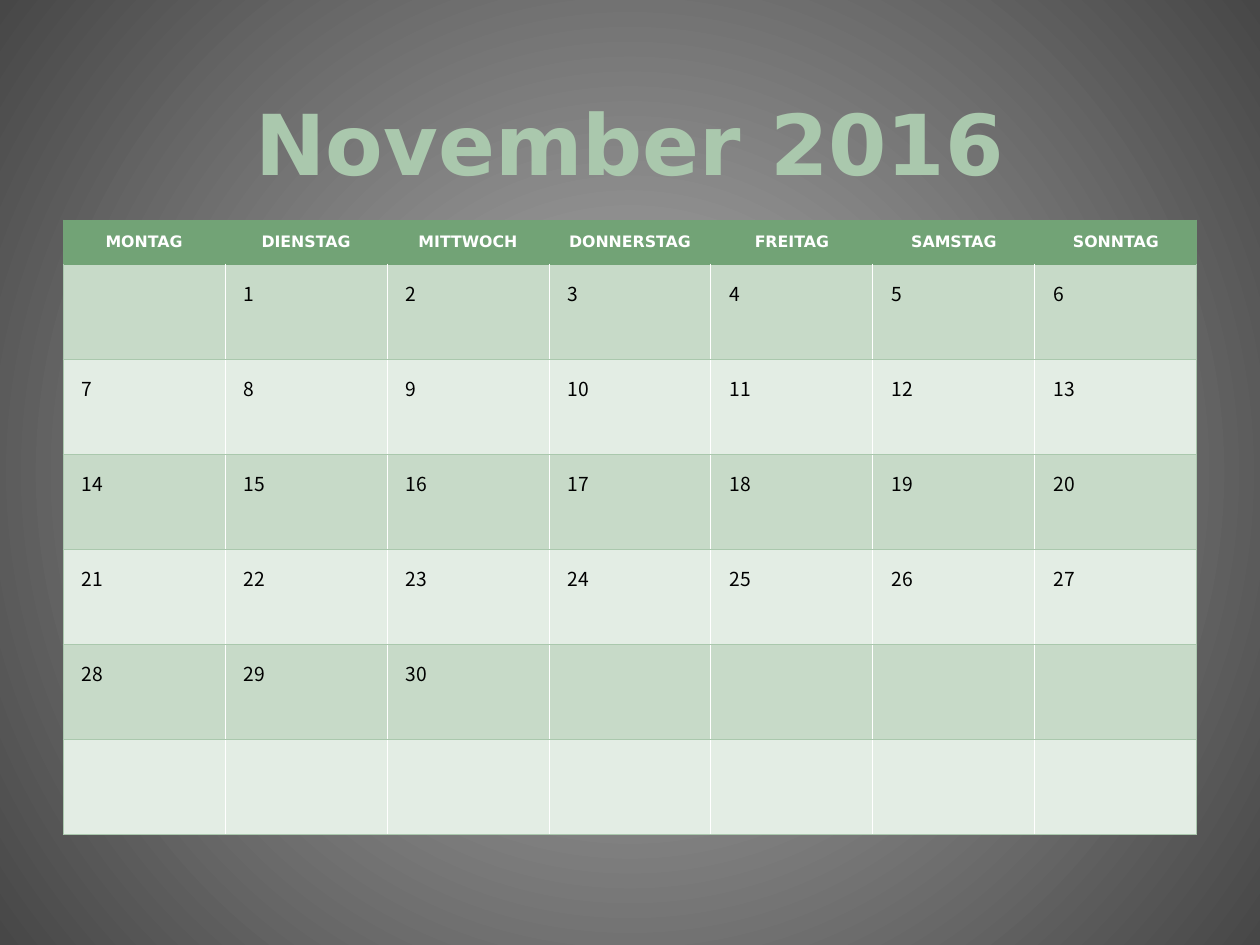
from dataclasses import dataclass

from lxml.etree import SubElement as Sub
from pptx import Presentation
from pptx.dml.color import RGBColor as Rgb
from pptx.enum.text import MSO_ANCHOR as Anchor, MSO_AUTO_SIZE as Fit, PP_ALIGN as Align
from pptx.oxml.ns import qn
from pptx.util import Emu, Pt

COLORS = {
    "glow": "B1B1B1",
    "edge": "474747",
    "title": "AAC8AD",
    "head": "72A376",
    "dark": "C7DAC8",
    "light": "E3EDE4",
    "white": "FFFFFF",
    "black": "000000",
}
SCALE = 914400 / 126
DAYS = ["MONTAG", "DIENSTAG", "MITTWOCH", "DONNERSTAG", "FREITAG", "SAMSTAG", "SONNTAG"]
WEEKS = 6
FIRST = 1
LAST = 30


@dataclass(frozen=True)
class Style:
    font: str
    size: int
    color: str
    bold: bool
    align: Align
    anchor: Anchor
    lead: float = 1.0
    indent: int = 0


@dataclass(frozen=True)
class Entry:
    row: int
    col: int
    text: str
    fill: str
    style: Style
    edges: dict[str, str | None]


TITLE = Style("DejaVu Sans", 48, "title", True, Align.CENTER, Anchor.BOTTOM)
HEAD = Style("DejaVu Sans", 9, "white", True, Align.CENTER, Anchor.MIDDLE)
DAY = Style("Noto Sans CJK SC", 11, "black", False, Align.LEFT, Anchor.TOP, 1.3, 6)


def px(count: int) -> Emu:
    return Emu(round(count * SCALE))


def tint(name: str) -> Rgb:
    return Rgb.from_string(COLORS[name])


def write(frame, text: str, style: Style) -> None:
    frame.text = text
    para = frame.paragraphs[0]
    if style.indent:
        props = para._p.get_or_add_pPr()
        props.set("marL", str(px(style.indent)))
        props.set("indent", "0")
    para.alignment = style.align
    para.line_spacing = style.lead
    for run in para.runs:
        font = run.font
        font.name = style.font
        font.size = Pt(style.size)
        font.bold = style.bold
        font.color.rgb = tint(style.color)


def paint(slide) -> None:
    fill = slide.background.fill
    fill.gradient()
    for stop, name in zip(fill.gradient_stops, ("glow", "edge")):
        stop.color.rgb = tint(name)
    line = slide.element.find(".//" + qn("a:lin"))
    grad = line.getparent()
    grad.remove(line)
    ring = Sub(grad, qn("a:path"), path="circle")
    Sub(ring, qn("a:fillToRect"), l="50000", t="50000", r="50000", b="50000")


def border(cell, edges: dict[str, str | None]) -> None:
    props = cell._tc.get_or_add_tcPr()
    for at, (side, name) in enumerate(edges.items()):
        line = Sub(props, qn(f"a:ln{side}"), w=str(Pt(0.5)))
        if name is None:
            Sub(line, qn("a:noFill"))
        else:
            Sub(Sub(line, qn("a:solidFill")), qn("a:srgbClr"), val=COLORS[name])
        props.insert(at, line)


def draw(table, entry: Entry) -> None:
    cell = table.cell(entry.row, entry.col)
    cell.fill.solid()
    cell.fill.fore_color.rgb = tint(entry.fill)
    cell.vertical_anchor = entry.style.anchor
    write(cell.text_frame, entry.text, entry.style)
    border(cell, entry.edges)


def plan() -> list[Entry]:
    items = []
    end = len(DAYS) - 1
    for col, name in enumerate(DAYS):
        edges = {
            "L": "head" if col == 0 else None,
            "R": "head" if col == end else None,
            "T": "head",
            "B": "head",
        }
        items.append(Entry(0, col, name, "head", HEAD, edges))
    for row in range(1, WEEKS + 1):
        for col in range(len(DAYS)):
            date = (row - 1) * len(DAYS) + col - FIRST + 1
            text = str(date) if 1 <= date <= LAST else ""
            edges = {
                "L": "title" if col == 0 else "white",
                "R": "title" if col == end else "white",
                "T": "head" if row == 1 else "title",
                "B": "title",
            }
            items.append(Entry(row, col, text, "dark" if row % 2 else "light", DAY, edges))
    return items


def main() -> None:
    deck = Presentation()
    deck.slide_width, deck.slide_height = px(1260), px(945)
    slide = deck.slides.add_slide(deck.slide_layouts[5])
    paint(slide)

    title = slide.shapes.title
    title.left, title.top, title.width, title.height = px(63), px(42), px(1134), px(157)
    frame = title.text_frame
    frame.auto_size = Fit.NONE
    frame.vertical_anchor = TITLE.anchor
    write(frame, "November 2016", TITLE)

    shape = slide.shapes.add_table(WEEKS + 1, len(DAYS), px(63), px(220), px(1134), px(614))
    table = shape.table
    table.first_row = False
    table.horz_banding = False
    for col in table.columns:
        col.width = px(162)
    for at, row in enumerate(table.rows):
        row.height = px(95 if at else 44)
    for entry in plan():
        draw(table, entry)

    deck.save("out.pptx")


if __name__ == "__main__":
    main()
